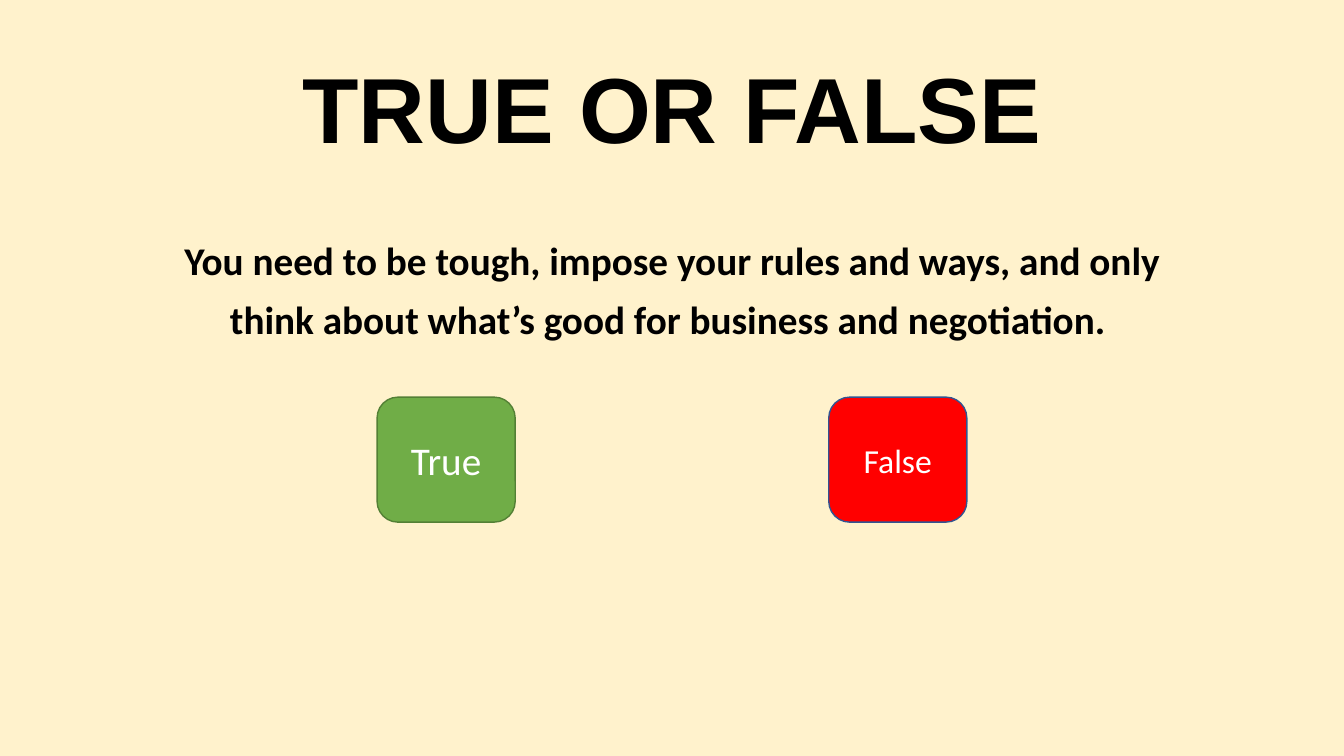
"""Build a true-or-false quiz slide with a statement and two answer buttons."""
from pptx import Presentation
from pptx import util as u
from pptx.dml.color import RGBColor
from pptx.enum import shapes, text

CREAM = RGBColor(0xFF, 0xF2, 0xCC)
BLACK = RGBColor(0, 0, 0)
WHITE = RGBColor(0xFF, 0xFF, 0xFF)
GREEN = RGBColor(0x70, 0xAD, 0x47)
MOSS = RGBColor(0x53, 0x80, 0x35)
RED = RGBColor(0xFF, 0, 0)
BLUE = RGBColor(0x32, 0x54, 0x91)

WIDE, HIGH = 13.33, 7.5
TITLE = "TRUE OR FALSE"
CLAIM = ("You need to be tough, impose your rules and ways, "
         "and only think about what’s good for business and negotiation. ")
ANSWERS = [("True", 28, GREEN, MOSS), ("False", 24, RED, BLUE)]
BUTTON = (1.37, 1.24)
STEP, TOP = 4.48, 3.94


def write(shape, words, size, color=BLACK, font="Calibri", bold=False,
          line=1.0, after=0, anchor=text.MSO_ANCHOR.MIDDLE):
    frame = shape.text_frame
    frame.word_wrap = True
    frame.vertical_anchor = anchor
    para = frame.paragraphs[0]
    para.alignment = text.PP_ALIGN.CENTER
    para.line_spacing = line
    para.space_after = u.Pt(after)
    run = para.add_run()
    run.text = words
    run.font.name = font
    run.font.size = u.Pt(size)
    run.font.bold = bold
    run.font.color.rgb = color


def place(mid, top, width, height):
    return [u.Inches(n) for n in (mid - width / 2, top, width, height)]


def main():
    deck = Presentation()
    deck.slide_width, deck.slide_height = u.Inches(WIDE), u.Inches(HIGH)
    slide = deck.slides.add_slide(deck.slide_layouts[6])
    slide.background.fill.solid()
    slide.background.fill.fore_color.rgb = CREAM
    mid = WIDE / 2

    title = slide.shapes.add_textbox(*place(mid, 0.4, 11.5, 1.45))
    write(title, TITLE, 66, font="Arial", bold=True, line=0.9)

    claim = slide.shapes.add_textbox(*place(mid, 2.18, 10, 1.24))
    write(claim, CLAIM, 28, bold=True, line=1.25, after=8,
          anchor=text.MSO_ANCHOR.TOP)

    for i, (word, size, fill, edge) in enumerate(ANSWERS):
        spot = place(mid + (i - 0.5) * STEP, TOP, *BUTTON)
        button = slide.shapes.add_shape(
            shapes.MSO_SHAPE.ROUNDED_RECTANGLE, *spot)
        button.shadow.inherit = False
        button.fill.solid()
        button.fill.fore_color.rgb = fill
        button.line.color.rgb = edge
        button.line.width = u.Pt(1)
        write(button, word, size, color=WHITE)

    deck.save("out.pptx")


if __name__ == "__main__":
    main()
